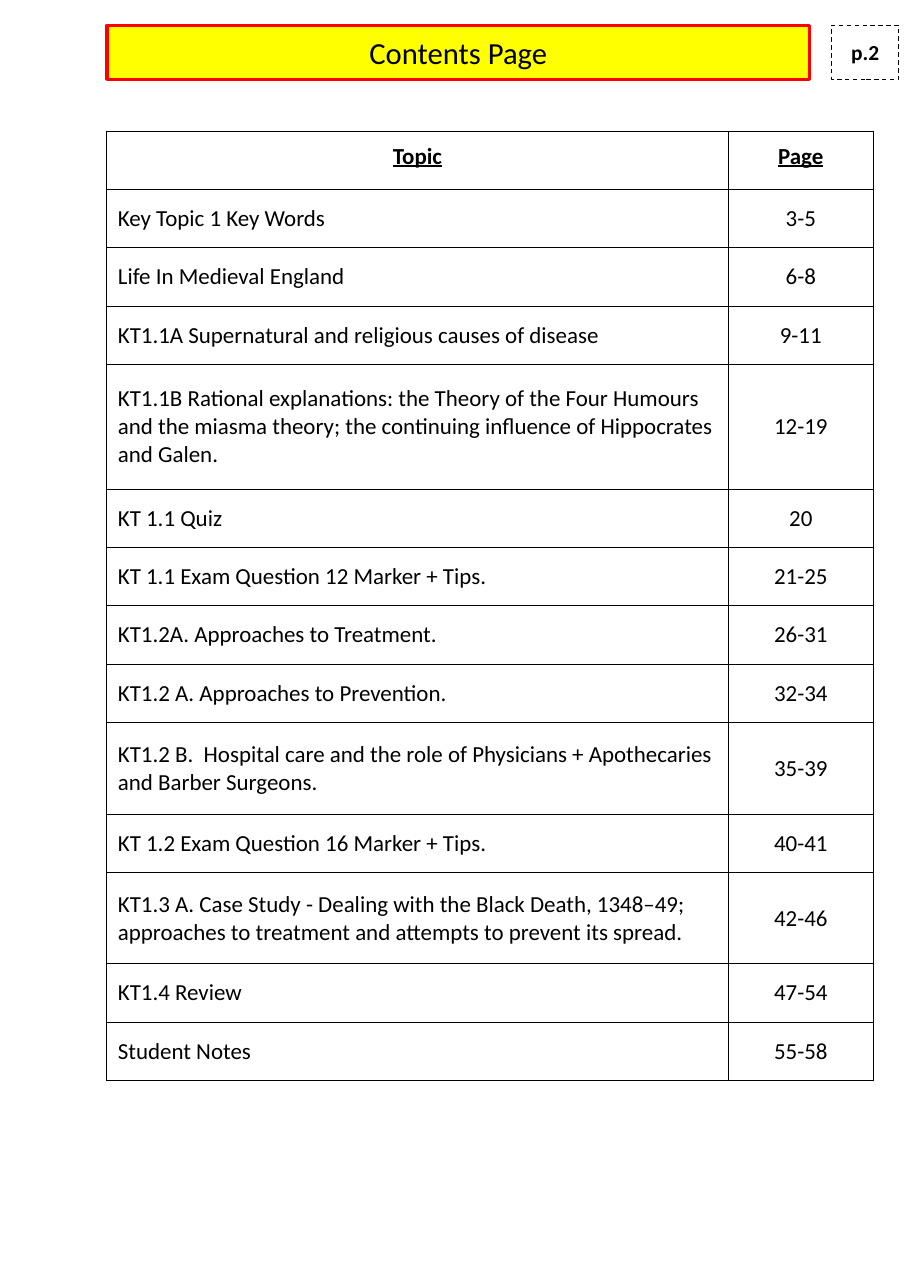
from dataclasses import dataclass

from lxml.etree import SubElement
from pptx import Presentation
from pptx.dml.color import RGBColor
from pptx.enum.dml import MSO_LINE
from pptx.enum.shapes import MSO_SHAPE
from pptx.enum.text import MSO_ANCHOR, MSO_AUTO_SIZE, PP_ALIGN
from pptx.oxml.ns import qn
from pptx.util import Inches, Pt


@dataclass
class Theme:
    font: str = "Calibri"
    black: str = "000000"
    white: str = "FFFFFF"
    yellow: str = "FFFF00"
    red: str = "FF0000"
    title_size: int = 20
    page_size: int = 14
    table_size: int = 15


theme = Theme()
INSET = Inches(0.1)


def write(holder, text, size, bold=False, underline=False,
          align=PP_ALIGN.CENTER, anchor=MSO_ANCHOR.MIDDLE):
    holder.margin_left = holder.margin_right = INSET
    holder.margin_top = holder.margin_bottom = INSET
    holder.vertical_anchor = anchor
    frame = getattr(holder, "text_frame", holder)
    frame.word_wrap = True
    paragraph = frame.paragraphs[0]
    paragraph.alignment = align
    run = paragraph.add_run()
    run.text = text
    run.font.name = theme.font
    run.font.size = Pt(size)
    run.font.bold = bold
    run.font.underline = underline
    run.font.color.rgb = RGBColor.from_string(theme.black)


def add_borders(cell):
    properties = cell._tc.get_or_add_tcPr()
    for side in ("a:lnL", "a:lnR", "a:lnT", "a:lnB"):
        border = SubElement(properties, qn(side), w=str(Pt(0.75)))
        fill = SubElement(border, qn("a:solidFill"))
        SubElement(fill, qn("a:srgbClr"), val=theme.black)


presentation = Presentation()
presentation.slide_width = Inches(8.27)
presentation.slide_height = Inches(11.69)
slide = presentation.slides.add_slide(presentation.slide_layouts[5])

heading = slide.shapes.title
heading.left, heading.top = Inches(0.97), Inches(0.23)
heading.width, heading.height = Inches(6.38), Inches(0.49)
heading.fill.solid()
heading.fill.fore_color.rgb = RGBColor.from_string(theme.yellow)
heading.line.color.rgb = RGBColor.from_string(theme.red)
heading.line.width = Pt(2.25)
heading.text_frame.auto_size = MSO_AUTO_SIZE.NONE
write(heading.text_frame, "Contents Page", theme.title_size)

topics = [
    ("Topic", "Page", 1),
    ("Key Topic 1 Key Words", "3-5", 1),
    ("Life In Medieval England", "6-8", 1),
    ("KT1.1A Supernatural and religious causes of disease", "9-11", 1),
    ("KT1.1B Rational explanations: the Theory of the Four Humours and the "
     "miasma theory; the continuing influence of Hippocrates and Galen.", "12-19", 3),
    ("KT 1.1 Quiz", "20", 1),
    ("KT 1.1 Exam Question 12 Marker + Tips.", "21-25", 1),
    ("KT1.2A. Approaches to Treatment.", "26-31", 1),
    ("KT1.2 A. Approaches to Prevention.", "32-34", 1),
    ("KT1.2 B.  Hospital care and the role of Physicians + Apothecaries "
     "and Barber Surgeons.", "35-39", 2),
    ("KT 1.2 Exam Question 16 Marker + Tips.", "40-41", 1),
    ("KT1.3 A. Case Study - Dealing with the Black Death, 1348–49; "
     "approaches to treatment and attempts to prevent its spread.", "42-46", 2),
    ("KT1.4 Review", "47-54", 1),
    ("Student Notes", "55-58", 1),
]
row_heights = [Inches(0.23 + 0.3 * lines) for _, _, lines in topics]
contents = slide.shapes.add_table(
    len(topics), 2, Inches(0.97), Inches(1.19), Inches(6.96), sum(row_heights)
).table
contents.first_row = contents.horz_banding = False
contents.columns[0].width = Inches(5.64)
contents.columns[1].width = Inches(1.32)

for row, (topic, pages, _) in enumerate(topics):
    contents.rows[row].height = row_heights[row]
    is_header = row == 0
    for column, text in enumerate((topic, pages)):
        cell = contents.cell(row, column)
        centred = is_header or column == 1
        write(cell, text, theme.table_size, bold=is_header, underline=is_header,
              align=PP_ALIGN.CENTER if centred else PP_ALIGN.LEFT,
              anchor=MSO_ANCHOR.TOP if is_header else MSO_ANCHOR.MIDDLE)
        add_borders(cell)
        cell.fill.background()

page_number = slide.shapes.add_shape(
    MSO_SHAPE.RECTANGLE, Inches(7.55), Inches(0.23), Inches(0.61), Inches(0.49)
)
page_number.shadow.inherit = False
page_number.fill.solid()
page_number.fill.fore_color.rgb = RGBColor.from_string(theme.white)
page_number.line.color.rgb = RGBColor.from_string(theme.black)
page_number.line.width = Pt(0.75)
page_number.line.dash_style = MSO_LINE.DASH
write(page_number.text_frame, "p.2", theme.page_size, bold=True)

presentation.save("out.pptx")
